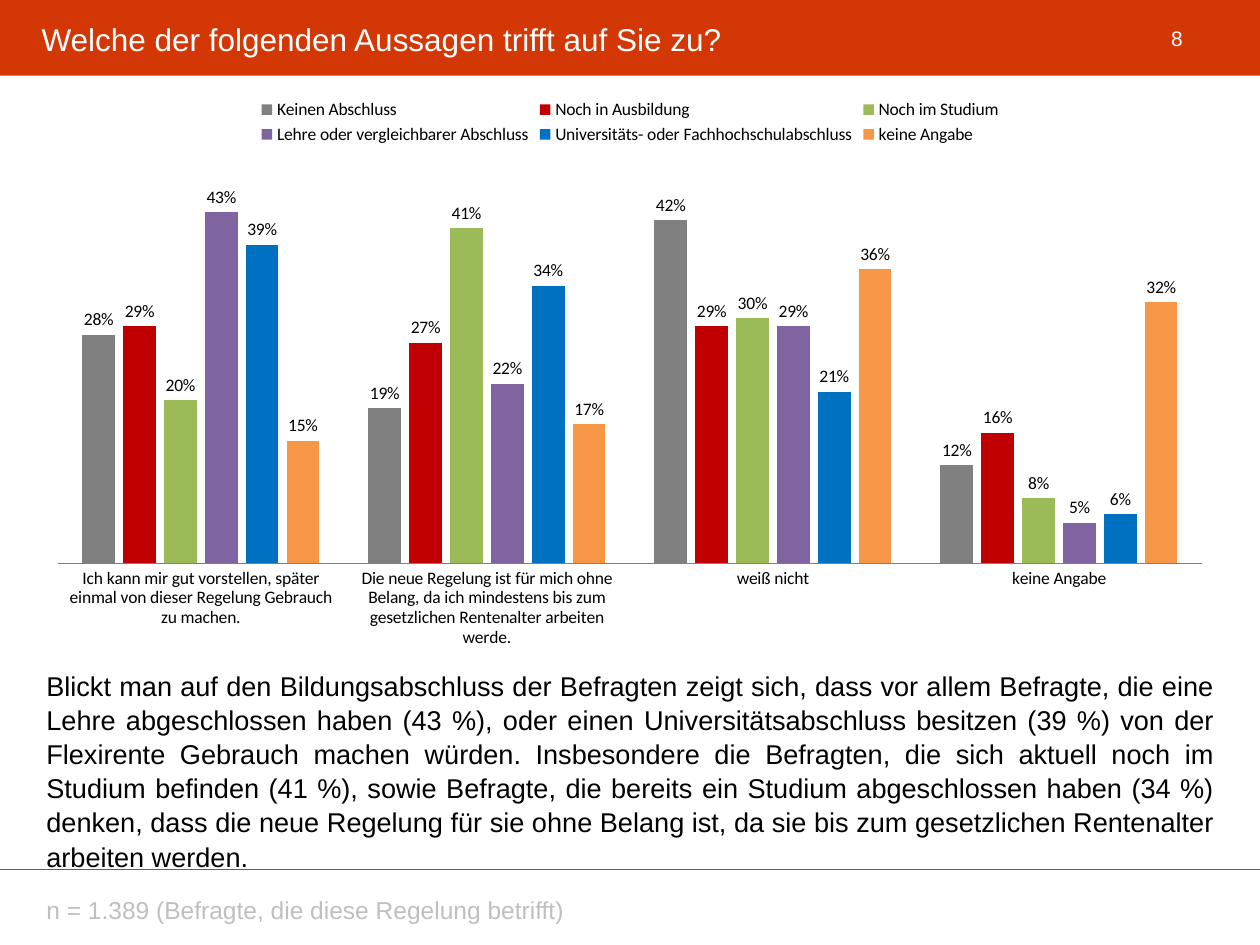
from lxml.etree import SubElement
from pptx import Presentation
from pptx.chart.data import CategoryChartData
from pptx.dml.color import RGBColor
from pptx.enum.chart import XL_CHART_TYPE as ChartType, XL_LABEL_POSITION as LabelPosition
from pptx.enum.chart import XL_LEGEND_POSITION as LegendPosition, XL_TICK_MARK as TickMark
from pptx.enum.shapes import MSO_CONNECTOR as Connector, MSO_SHAPE as Shape
from pptx.enum.text import MSO_ANCHOR as Anchor, PP_ALIGN as Align
from pptx.oxml.ns import qn
from pptx.util import Inches, Pt

# Content
TITLE = "Welche der folgenden Aussagen trifft auf Sie zu?"
PAGE_NUMBER = "8"
COMMENT = (
    "Blickt man auf den Bildungsabschluss der Befragten zeigt sich, dass vor allem Befragte, "
    "die eine Lehre abgeschlossen haben (43 %), oder einen Universitätsabschluss besitzen (39 %) "
    "von der Flexirente Gebrauch machen würden. Insbesondere die Befragten, die sich aktuell noch "
    "im Studium befinden (41 %), sowie Befragte, die bereits ein Studium abgeschlossen haben (34 %) "
    "denken, dass die neue Regelung für sie ohne Belang ist, da sie bis zum gesetzlichen "
    "Rentenalter arbeiten werden."
)
SAMPLE = "n = 1.389 (Befragte, die diese Regelung betrifft)"
STATEMENTS = [
    "Ich kann mir gut vorstellen, später einmal von dieser Regelung Gebrauch zu machen.",
    "Die neue Regelung ist für mich ohne Belang, da ich mindestens bis zum gesetzlichen "
    "Rentenalter arbeiten werde.",
    "weiß nicht",
    "keine Angabe",
]
DEGREES = [
    ("Keinen Abschluss", (0.28, 0.19, 0.42, 0.12), RGBColor(0x80, 0x80, 0x80)),
    ("Noch in Ausbildung", (0.29, 0.27, 0.29, 0.16), RGBColor(0xC0, 0x00, 0x00)),
    ("Noch im Studium", (0.20, 0.41, 0.30, 0.08), RGBColor(0x9B, 0xBB, 0x59)),
    ("Lehre oder vergleichbarer Abschluss", (0.43, 0.22, 0.29, 0.05), RGBColor(0x80, 0x64, 0xA2)),
    ("Universitäts- oder Fachhochschulabschluss", (0.39, 0.34, 0.21, 0.06),
     RGBColor(0x00, 0x70, 0xC0)),
    ("keine Angabe", (0.15, 0.17, 0.36, 0.32), RGBColor(0xF7, 0x96, 0x46)),
]

# Colours and layout
RED = RGBColor(0xD4, 0x37, 0x06)
WHITE = RGBColor(0xFF, 0xFF, 0xFF)
BLACK = RGBColor(0x00, 0x00, 0x00)
GREY = RGBColor(0xBF, 0xBF, 0xBF)
AXIS_GREY = RGBColor(0x80, 0x80, 0x80)
WIDTH, HEIGHT = Inches(10), Inches(7.5)
MARGIN = Inches(0.27)
CONTENT_WIDTH = WIDTH - 2 * MARGIN
HEADER_HEIGHT = Inches(0.6)
CHART_TOP, COMMENT_TOP, RULE_TOP = Inches(0.68), Inches(5.25), Inches(6.9)
PLOT_SHARES = {"x": 0.02, "y": 0.12, "w": 0.96, "h": 0.71}


def write(shape, text, size, color, align=Align.LEFT, anchor=Anchor.MIDDLE):
    frame = shape.text_frame
    frame.word_wrap = True
    frame.vertical_anchor = anchor
    frame.text = text
    paragraph = frame.paragraphs[0]
    paragraph.alignment = align
    font = paragraph.font
    font.name, font.size, font.color.rgb = "Arial", Pt(size), color
    return paragraph


presentation = Presentation()
presentation.slide_width, presentation.slide_height = WIDTH, HEIGHT
slide = presentation.slides.add_slide(presentation.slide_layouts[5])
shapes = slide.shapes

# Header band, placed behind the title
band = shapes.add_shape(Shape.RECTANGLE, 0, 0, WIDTH, HEADER_HEIGHT)
band.shadow.inherit = False
band.fill.solid()
band.fill.fore_color.rgb = RED
band.line.fill.background()
title = shapes.title
band._element.getparent().insert(2, band._element)
title.left, title.top = Inches(0.23), Inches(0.16)
title.width, title.height = Inches(9.51), Inches(0.3)
write(title, TITLE, 18, WHITE)
number = shapes.add_textbox(Inches(8.94), Inches(0.1), Inches(0.8), Inches(0.4))
write(number, PAGE_NUMBER, 12, WHITE, Align.CENTER)

# Footer rule and sample size
rule = shapes.add_connector(Connector.STRAIGHT, 0, RULE_TOP, WIDTH, RULE_TOP)
rule.line.color.rgb = RED
rule.line.width = Pt(0.75)
SubElement(rule._element.spPr, qn("a:effectLst"))
sample = shapes.add_textbox(MARGIN, Inches(7.06), Inches(8.11), Inches(0.32))
write(sample, SAMPLE, 14, GREY)

# Comment
comment = shapes.add_textbox(MARGIN, COMMENT_TOP, CONTENT_WIDTH, Inches(1.5))
write(comment, COMMENT, 15.5, BLACK, Align.JUSTIFY, Anchor.TOP).line_spacing = 1.05

# Chart
data = CategoryChartData(number_format="0%")
data.categories = STATEMENTS
for name, values, _ in DEGREES:
    data.add_series(name, values)
chart = shapes.add_chart(ChartType.COLUMN_CLUSTERED, MARGIN, CHART_TOP, CONTENT_WIDTH,
                         COMMENT_TOP - CHART_TOP, data).chart
chart.font.name, chart.font.size, chart.font.color.rgb = "Calibri", Pt(10), BLACK
chart.has_title = False
chart.has_legend = True
chart.legend.position = LegendPosition.TOP
chart.legend.include_in_layout = False

value_axis = chart.value_axis
value_axis.minimum_scale, value_axis.maximum_scale = 0, 0.5
value_axis.has_major_gridlines = False
value_axis.visible = False
category_axis = chart.category_axis
category_axis.major_tick_mark = TickMark.NONE
category_axis.format.line.color.rgb = AXIS_GREY

plot = chart.plots[0]
plot.gap_width, plot.overlap = 150, -25
plot.vary_by_categories = False
for series, (_, _, color) in zip(plot.series, DEGREES):
    series.format.fill.solid()
    series.format.fill.fore_color.rgb = color
    labels = series.data_labels
    labels.show_value = True
    labels.number_format, labels.number_format_is_linked = "###0%", False
    labels.position = LabelPosition.OUTSIDE_END

# Fixed plot area, as shares of the chart
plot_area = chart._chartSpace.chart.plotArea
for old_layout in plot_area.findall(qn("c:layout")):
    plot_area.remove(old_layout)
layout = SubElement(plot_area, qn("c:layout"))
plot_area.insert(0, layout)
manual = SubElement(layout, qn("c:manualLayout"))
settings = [("layoutTarget", "inner"), ("xMode", "edge"), ("yMode", "edge"), *PLOT_SHARES.items()]
for tag, value in settings:
    SubElement(manual, qn(f"c:{tag}")).set("val", str(value))

presentation.save("out.pptx")
